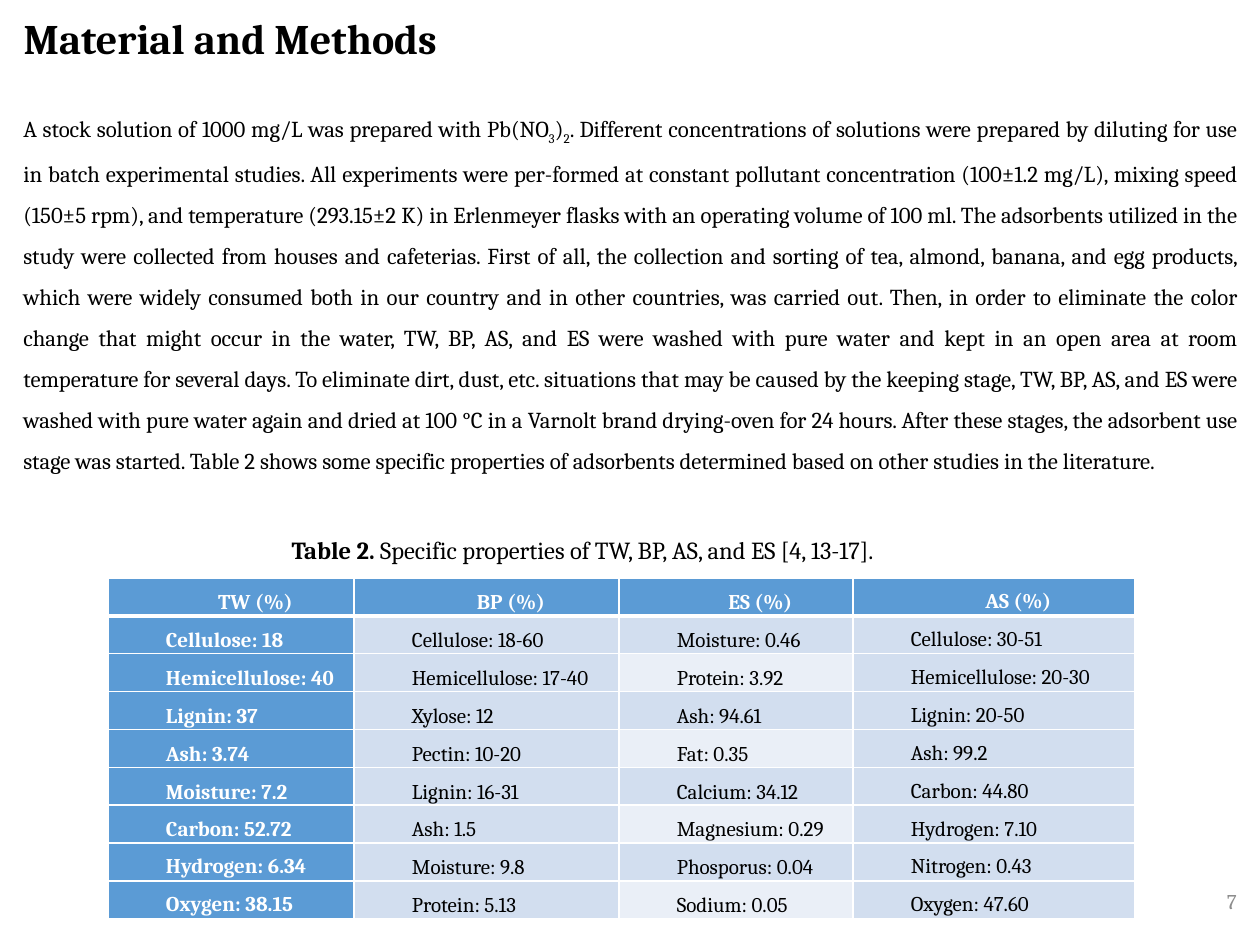
"""Build the Material and Methods slide with its adsorbent table."""
from lxml import etree
from pptx import Presentation
from pptx import util as u
from pptx.dml import color
from pptx.enum import text
from pptx.oxml import ns

PX = 914400 // 126
FONT = "Cambria"
COLORS = {"ink": "000000", "paper": "FFFFFF", "muted": "8C8C8C",
          "head": "5B9BD5", "band": "D2DEEF", "light": "EAEFF7"}
ALIGN, ANCHOR = text.PP_ALIGN, text.MSO_ANCHOR

PROCEDURE = [
    ". Different concentrations of solutions were prepared by diluting for use in batch "
    "experimental studies.",
    "All experiments were per-formed at constant pollutant concentration (100±1.2 mg/L), mixing "
    "speed (150±5 rpm), and temperature (293.15±2 K) in Erlenmeyer flasks with an operating "
    "volume of 100 ml.",
    "The adsorbents utilized in the study were collected from houses and cafeterias.",
    "First of all, the collection and sorting of tea, almond, banana, and egg products, which "
    "were widely consumed both in our country and in other countries, was carried out.",
    "Then, in order to eliminate the color change that might occur in the water, TW, BP, AS, "
    "and ES were washed with pure water and kept in an open area at room temperature for "
    "several days.",
    "To eliminate dirt, dust, etc. situations that may be caused by the keeping stage, TW, BP, "
    "AS, and ES were washed with pure water again and dried at 100 °C in a Varnolt brand "
    "drying-oven for 24 hours.",
    "After these stages, the adsorbent use stage was started.",
    "Table 2 shows some specific properties of adsorbents determined based on other studies in "
    "the literature.",
]
STOCK = [("A stock solution of 1000 mg/L was prepared with Pb(NO", {}),
         ("3", {"sub": True}), (")", {}), ("2", {"sub": True}),
         (" ".join(PROCEDURE), {})]
CAPTION = [("Table 2.", {"bold": True}),
           (" Specific properties of TW, BP, AS, and ES [4, 13-17].", {})]
PROPERTIES = [
    ["TW (%)", "BP (%)", "ES (%)", "AS (%)"],
    ["Cellulose: 18", "Cellulose: 18-60", "Moisture: 0.46", "Cellulose: 30-51"],
    ["Hemicellulose: 40", "Hemicellulose: 17-40", "Protein: 3.92", "Hemicellulose: 20-30"],
    ["Lignin: 37", "Xylose: 12", "Ash: 94.61", "Lignin: 20-50"],
    ["Ash: 3.74", "Pectin: 10-20", "Fat: 0.35", "Ash: 99.2"],
    ["Moisture: 7.2", "Lignin: 16-31", "Calcium: 34.12", "Carbon: 44.80"],
    ["Carbon: 52.72", "Ash: 1.5", "Magnesium: 0.29", "Hydrogen: 7.10"],
    ["Hydrogen: 6.34", "Moisture: 9.8", "Phosporus: 0.04", "Nitrogen: 0.43"],
    ["Oxygen: 38.15", "Protein: 5.13", "Sodium: 0.05", "Oxygen: 47.60"],
]
COLUMN_WIDTHS = [246, 265, 234, 282]
ROW_HEIGHT = 37


def px(length):
    """Turn whole pixels into EMU."""
    return u.Emu(length * PX)


def rgb(name):
    """Return the named colour."""
    return color.RGBColor.from_string(COLORS[name])


def apply(target, values):
    """Set every attribute in values on target."""
    for name, value in values.items():
        setattr(target, name, value)


def place(shape, box):
    """Move and size a shape to a pixel box."""
    apply(shape, dict(zip(("left", "top", "width", "height"), map(px, box))))


def write(frame, runs, size, ink="ink", indent=None, **paragraph_format):
    """Fill the first paragraph of a text frame with formatted runs."""
    paragraph = frame.paragraphs[0]
    apply(paragraph, paragraph_format)
    if indent:
        properties = paragraph._p.get_or_add_pPr()
        for name, value in zip(("marL", "indent"), indent):
            properties.set(name, str(px(value)))
    for words, style in runs:
        run = paragraph.add_run()
        run.text = words
        apply(run.font, {"name": FONT, "size": u.Pt(size), "bold": style.get("bold", False)})
        run.font.color.rgb = rgb(ink)
        if style.get("sub"):
            run.font._element.set("baseline", "-25000")


def add_title(slide, box, words):
    """Format the title placeholder."""
    title = slide.shapes.title
    place(title, box)
    apply(title.text_frame, {"vertical_anchor": ANCHOR.TOP, "word_wrap": True,
                             "auto_size": text.MSO_AUTO_SIZE.NONE})
    write(title.text_frame, [(words, {"bold": True})], 24, alignment=ALIGN.LEFT)


def add_text(slide, box, runs, size, anchor=ANCHOR.TOP, wrap=True, **style):
    """Add a text box with one paragraph."""
    frame = slide.shapes.add_textbox(*map(px, box)).text_frame
    apply(frame, {"word_wrap": wrap, "vertical_anchor": anchor})
    write(frame, runs, size, **style)


def set_borders(cell, widths):
    """Draw white cell borders from a dict of side to points."""
    properties = cell._tc.get_or_add_tcPr()
    for side, points in widths.items():
        line = etree.SubElement(properties, ns.qn(f"a:ln{side}"), w=str(u.Pt(points)))
        fill = etree.SubElement(line, ns.qn("a:solidFill"))
        etree.SubElement(fill, ns.qn("a:srgbClr"), val=COLORS["paper"])


def cell_fill(row, column):
    """Choose the fill of a cell by its place in the table."""
    if row == 0 or column == 0:
        return "head"
    return "light" if column == 2 and row % 2 == 0 else "band"


def add_properties_table(slide, left, top):
    """Add the table of adsorbent properties."""
    size = (sum(COLUMN_WIDTHS), ROW_HEIGHT * len(PROPERTIES))
    table = slide.shapes.add_table(len(PROPERTIES), len(COLUMN_WIDTHS),
                                   *map(px, (left, top, *size))).table
    for column, width in zip(table.columns, COLUMN_WIDTHS):
        column.width = px(width)
    for row, entries in enumerate(PROPERTIES):
        table.rows[row].height = px(ROW_HEIGHT)
        for column, words in enumerate(entries):
            cell = table.cell(row, column)
            fill = cell_fill(row, column)
            is_head = fill == "head"
            at_top = column == 3 or (column == 0 and row > 5)
            apply(cell, {"margin_left": px(9), "margin_right": px(9),
                         "margin_top": 0, "margin_bottom": 0,
                         "vertical_anchor": ANCHOR.TOP if at_top else ANCHOR.MIDDLE})
            set_borders(cell, {"L": 1, "R": 1, "T": 3 if row == 1 else 1,
                               "B": 3 if row == 0 else 1})
            cell.fill.solid()
            cell.fill.fore_color.rgb = rgb(fill)
            write(cell.text_frame, [(words, {"bold": is_head})], 12,
                  ink="paper" if is_head else "ink", indent=(30, 19),
                  alignment=ALIGN.CENTER if row == 0 else ALIGN.JUSTIFY,
                  line_spacing=1.5, space_after=u.Pt(6))


def main():
    """Build and save the slide."""
    presentation = Presentation()
    apply(presentation, {"slide_width": px(1260), "slide_height": px(945)})
    slide = presentation.slides.add_slide(presentation.slide_layouts[5])
    add_title(slide, (11, 6, 1124, 63), "Material and Methods")
    add_text(slide, (955, 876, 294, 50), [("7", {})], 12, ANCHOR.MIDDLE,
             ink="muted", alignment=ALIGN.RIGHT)
    add_text(slide, (11, 93, 1238, 426), STOCK, 13,
             alignment=ALIGN.JUSTIFY, line_spacing=1.5)
    add_properties_table(slide, 108, 578)
    add_text(slide, (212, 528, 723, 43), CAPTION, 14, ANCHOR.MIDDLE, wrap=False,
             indent=(0, 19), alignment=ALIGN.CENTER)
    presentation.save("out.pptx")


if __name__ == "__main__":
    main()
